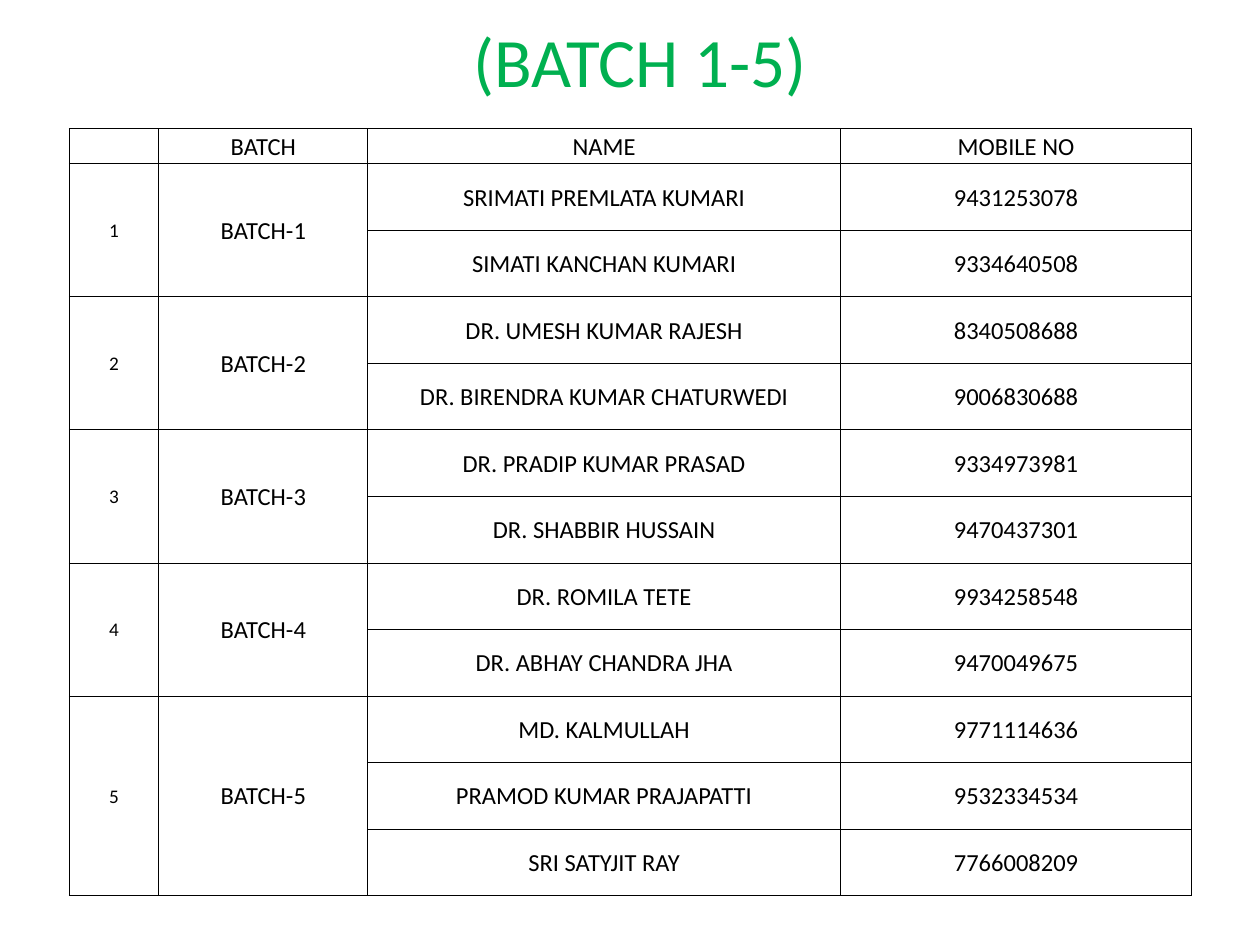
from lxml.etree import SubElement
from pptx import Presentation
from pptx.dml.color import RGBColor
from pptx.enum.text import MSO_ANCHOR as Anchor, PP_ALIGN as Align
from pptx.oxml.ns import qn
from pptx.util import Inches, Pt

HEADS = ["", "BATCH", "NAME", "MOBILE NO"]
BATCHES = [
    [("SRIMATI PREMLATA KUMARI", "9431253078"),
     ("SIMATI KANCHAN KUMARI", "9334640508")],
    [("DR. UMESH KUMAR RAJESH", "8340508688"),
     ("DR. BIRENDRA KUMAR CHATURWEDI", "9006830688")],
    [("DR. PRADIP KUMAR PRASAD", "9334973981"),
     ("DR. SHABBIR HUSSAIN", "9470437301")],
    [("DR. ROMILA TETE", "9934258548"),
     ("DR. ABHAY CHANDRA JHA", "9470049675")],
    [("MD. KALMULLAH", "9771114636"),
     ("PRAMOD KUMAR PRAJAPATTI", "9532334534"),
     ("SRI SATYJIT RAY", "7766008209")],
]
WIDTHS = [0.71, 1.66, 3.75, 2.79]
TOP, HEIGHT, HEAD = 1.02, 6.09, 0.28


def color(code):
    return RGBColor.from_string(code)


class Page:
    font = "Calibri"
    ink = "000000"
    green = "00B050"

    def __init__(self, slide):
        self.slide = slide

    def label(self, frame, text, size, ink):
        para = frame.paragraphs[0]
        para.text = text
        para.alignment = Align.CENTER
        for run in para.runs:
            run.font.name = self.font
            run.font.size = Pt(size)
            run.font.color.rgb = color(ink)
        if not text:
            SubElement(para._p, qn("a:endParaRPr"), sz=str(size * 100))

    def title(self, text):
        box = self.slide.shapes.title
        box.left, box.top = Inches(0.83), Inches(0.16)
        box.width, box.height = Inches(8.5), Inches(0.63)
        box.text_frame.vertical_anchor = Anchor.MIDDLE
        self.label(box.text_frame, text, 39.6, self.green)

    def border(self, cell):
        props = cell._tc.get_or_add_tcPr()
        for side in "LRTB":
            line = SubElement(props, qn(f"a:ln{side}"), w=str(Pt(0.5)))
            fill = SubElement(line, qn("a:solidFill"))
            SubElement(fill, qn("a:srgbClr"), val=self.ink)

    def cell(self, cell, text, size=14):
        cell.margin_left = cell.margin_right = cell.margin_top = Inches(0.01)
        cell.margin_bottom = 0
        cell.vertical_anchor = Anchor.MIDDLE
        self.label(cell.text_frame, text, size, self.ink)

    def table(self, heads, batches):
        count = sum(len(batch) for batch in batches)
        table = self.slide.shapes.add_table(
            count + 1, len(heads), Inches(0.55), Inches(TOP),
            Inches(sum(WIDTHS)), Inches(HEIGHT)).table
        table.first_row = table.horz_banding = False
        for col, width in zip(table.columns, WIDTHS):
            col.width = Inches(width)
        for row in table.rows:
            row.height = Inches((HEIGHT - HEAD) / count)
        table.rows[0].height = Inches(HEAD)
        for cell in table.iter_cells():
            self.border(cell)
            cell.fill.background()

        for col, head in enumerate(heads):
            self.cell(table.cell(0, col), head)
        row = 1
        for num, batch in enumerate(batches, 1):
            last = row + len(batch) - 1
            for col in (0, 1):
                table.cell(row, col).merge(table.cell(last, col))
            self.cell(table.cell(row, 0), str(num), 11)
            self.cell(table.cell(row, 1), f"BATCH-{num}")
            for name, phone in batch:
                self.cell(table.cell(row, 2), name)
                self.cell(table.cell(row, 3), phone)
                row += 1


def main():
    deck = Presentation()
    deck.slide_width, deck.slide_height = Inches(10), Inches(7.5)
    slide = deck.slides.add_slide(deck.slide_layouts[0])
    sub = slide.placeholders[1].element
    sub.getparent().remove(sub)
    page = Page(slide)
    page.title("(BATCH 1-5)")
    page.table(HEADS, BATCHES)
    deck.save("out.pptx")


if __name__ == "__main__":
    main()
